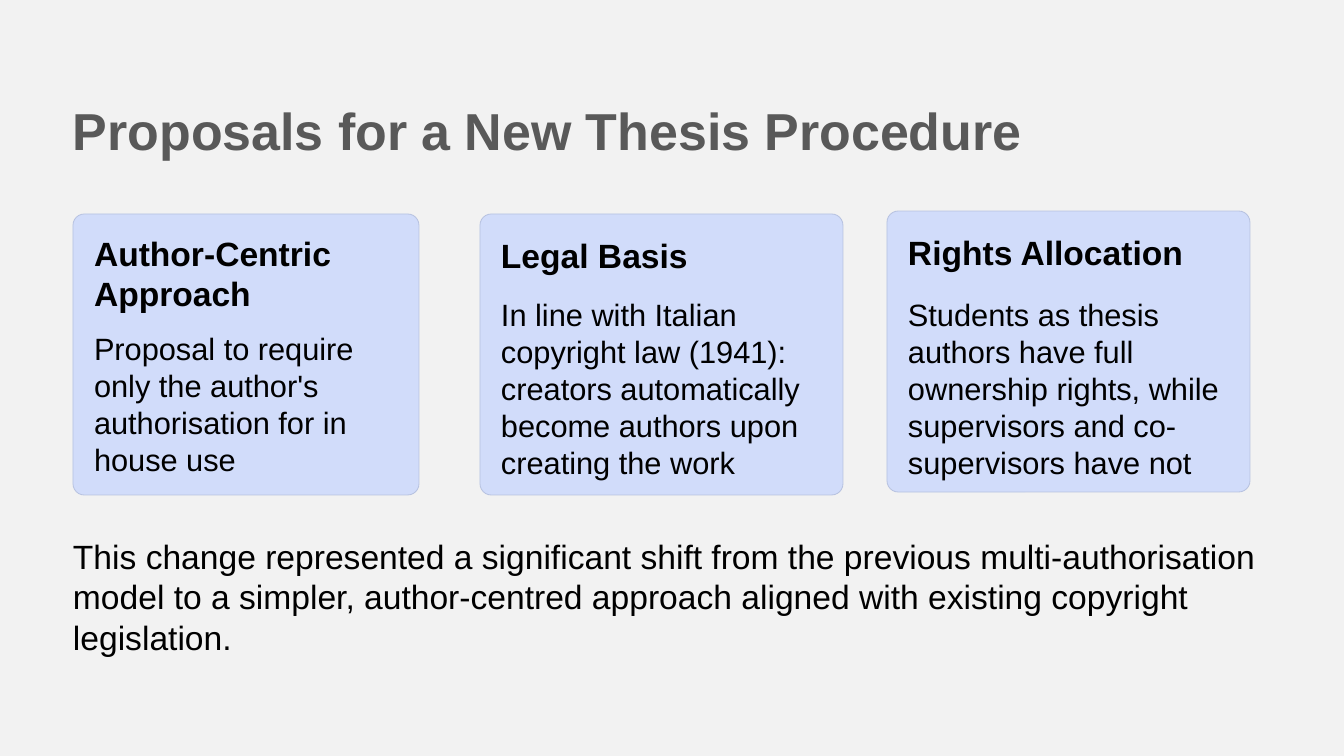
"""Build the slide on proposals for a new thesis procedure."""
from dataclasses import dataclass

from pptx import Presentation
from pptx.dml.color import RGBColor
from pptx.enum.shapes import MSO_SHAPE
from pptx.slide import Slide
from pptx.util import Emu, Pt

ROUNDED = MSO_SHAPE.ROUNDED_RECTANGLE
EMU_PER_PX = 914400 / 100.8
MARGIN = 73
CARD_PITCH = 407
CARD_HEIGHT = 281
TEXT_WIDTH = 340


@dataclass(frozen=True)
class Theme:
    font: str = "Arial"
    background: str = "F2F2F2"
    title: str = "595959"
    text: str = "000000"
    card: str = "D1DCFA"
    border: str = "B7C2E0"
    title_size: float = 37.1
    heading_size: float = 24
    body_size: float = 22


@dataclass(frozen=True)
class TextStyle:
    size: float
    color: str
    bold: bool = False
    line_points: float | None = None


@dataclass(frozen=True)
class Card:
    top: int
    width: int
    heading_top: int
    heading: list[str]
    heading_style: TextStyle
    body_top: int
    body: list[str]


THEME = Theme()
TITLE = TextStyle(THEME.title_size, THEME.title, True, 46.2)
HEADING = TextStyle(THEME.heading_size, THEME.text, True, 22.9)
TALL_HEADING = TextStyle(THEME.heading_size, THEME.text, True)
BODY = TextStyle(THEME.body_size, THEME.text)
SUMMARY = TextStyle(THEME.heading_size, THEME.text)

CARDS = [
    Card(214, 346, 233, ["Author-Centric", "Approach"], TALL_HEADING, 330,
         ["Proposal to require", "only the author's authorisation for in house use"]),
    Card(214, 363, 243, ["Legal Basis"], HEADING, 296,
         ["In line with Italian copyright law (1941): creators automatically "
          "become authors upon creating the work"]),
    Card(211, 363, 240, ["Rights Allocation"], HEADING, 296,
         ["Students as thesis authors have full ownership rights, while "
          "supervisors and co-supervisors have not"]),
]


def px(value: int) -> Emu:
    """Convert whole pixels to EMU."""
    return Emu(round(value * EMU_PER_PX))


def rgb(color: str) -> RGBColor:
    """Return the colour of a hex string."""
    return RGBColor.from_string(color)


def add_text(s: Slide, left: int, top: int, width: int, height: int,
             lines: list[str], style: TextStyle) -> None:
    """Add a text box without insets, one paragraph a line."""
    tf = s.shapes.add_textbox(px(left), px(top), px(width), px(height)).text_frame
    tf.word_wrap = True
    tf.margin_left = tf.margin_top = tf.margin_right = tf.margin_bottom = 0
    for i, line in enumerate(lines):
        p = tf.add_paragraph() if i else tf.paragraphs[0]
        if style.line_points:
            p.line_spacing = Pt(style.line_points)
        r = p.add_run()
        r.text = line
        r.font.name = THEME.font
        r.font.size = Pt(style.size)
        r.font.bold = style.bold
        r.font.color.rgb = rgb(style.color)


def add_card(s: Slide, left: int, card: Card) -> None:
    """Add a rounded card with its heading and body."""
    sp = s.shapes.add_shape(ROUNDED, px(left), px(card.top), px(card.width), px(CARD_HEIGHT))
    sp.adjustments[0] = 0.04
    sp.shadow.inherit = False
    sp.fill.solid()
    sp.fill.fore_color.rgb = rgb(THEME.card)
    sp.line.color.rgb = rgb(THEME.border)
    sp.line.width = Pt(0.6)
    text_left = left + 21
    add_text(s, text_left, card.heading_top, TEXT_WIDTH, 32, card.heading, card.heading_style)
    add_text(s, text_left, card.body_top, TEXT_WIDTH, 133, card.body, BODY)


def main() -> None:
    """Build and save the slide."""
    prs = Presentation()
    prs.slide_width, prs.slide_height = px(1344), px(756)
    s = prs.slides.add_slide(prs.slide_layouts[6])
    s.background.fill.solid()
    s.background.fill.fore_color.rgb = rgb(THEME.background)
    add_text(s, MARGIN, 96, 985, 66, ["Proposals for a New Thesis Procedure"], TITLE)
    for i, card in enumerate(CARDS):
        add_card(s, MARGIN + i * CARD_PITCH, card)
    add_text(s, MARGIN, 536, 1199, 67,
             ["This change represented a significant shift from the previous "
              "multi-authorisation model to a simpler, author-centred approach "
              "aligned with existing copyright legislation."], SUMMARY)
    prs.save("out.pptx")


if __name__ == "__main__":
    main()
